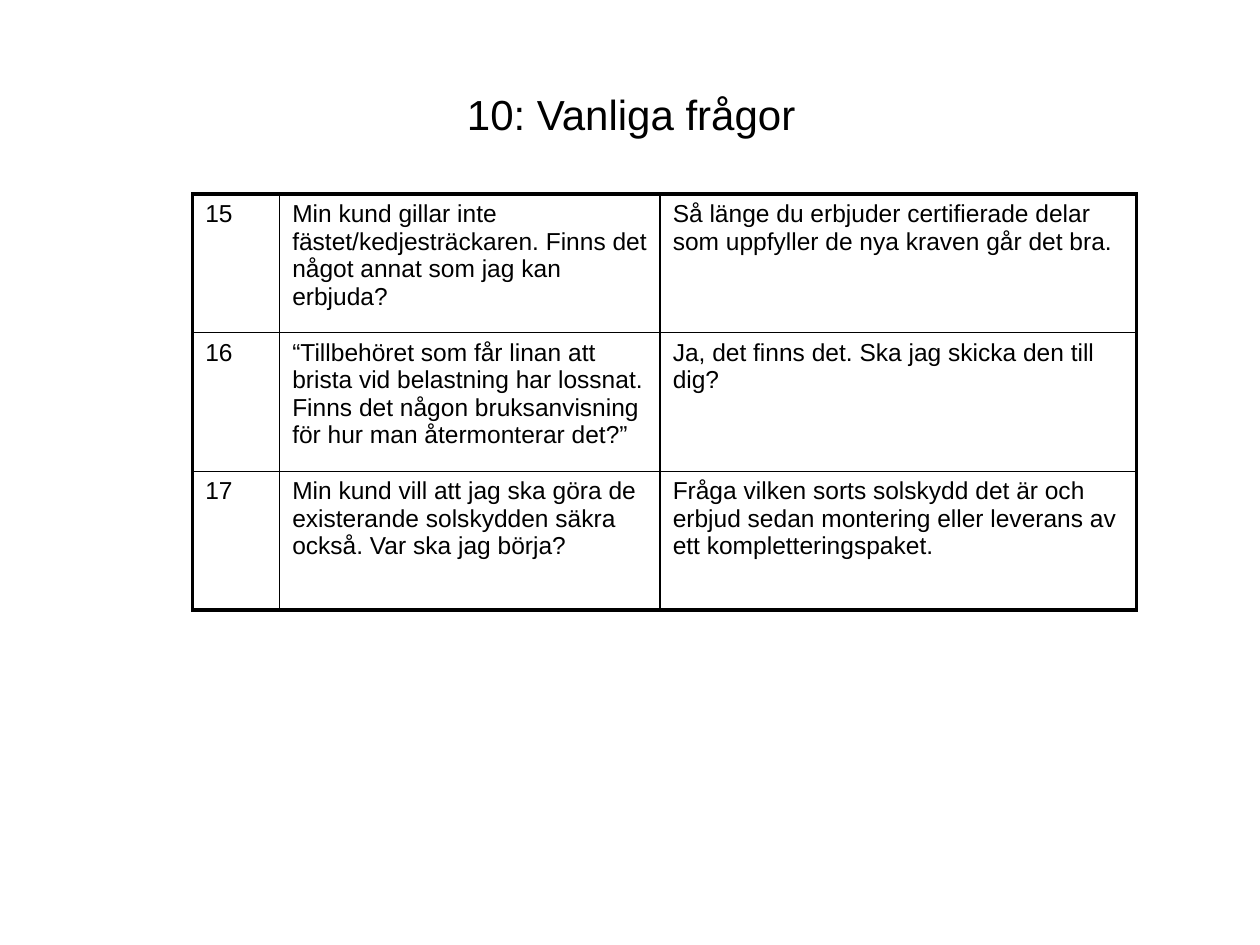
from dataclasses import dataclass

from lxml.etree import SubElement
from pptx import Presentation
from pptx.dml.color import RGBColor
from pptx.enum.text import MSO_ANCHOR, PP_ALIGN
from pptx.oxml.ns import qn
from pptx.util import Inches, Pt


@dataclass(frozen=True)
class Theme:
    font: str = "Arial"
    ink: str = "000000"
    title_size: float = 24
    cell_size: float = 14
    outer_line: float = 2.25
    inner_line: float = 1


theme = Theme()


def add_text(paragraph, text, size):
    run = paragraph.add_run()
    run.text = text
    run.font.name = theme.font
    run.font.size = Pt(size)
    run.font.bold = False
    run.font.color.rgb = RGBColor.from_string(theme.ink)


def add_border(cell, side, width):
    line = SubElement(cell._tc.get_or_add_tcPr(), qn(f"a:ln{side}"), w=str(Pt(width)))
    fill = SubElement(line, qn("a:solidFill"))
    SubElement(fill, qn("a:srgbClr"), val=theme.ink)


questions = [
    ("15",
     "Min kund gillar inte fästet/kedjesträckaren. Finns det något annat som jag kan erbjuda?",
     "Så länge du erbjuder certifierade delar som uppfyller de nya kraven går det bra."),
    ("16",
     "“Tillbehöret som får linan att brista vid belastning har lossnat. "
     "Finns det någon bruksanvisning för hur man återmonterar det?”",
     "Ja, det finns det. Ska jag skicka den till dig?"),
    ("17",
     "Min kund vill att jag ska göra de existerande solskydden säkra också. Var ska jag börja?",
     "Fråga vilken sorts solskydd det är och erbjud sedan montering eller leverans av "
     "ett kompletteringspaket."),
]
column_widths = [0.69, 3.02, 3.78]
row_height = 1.1

prs = Presentation()
prs.slide_width, prs.slide_height = Inches(10), Inches(7.5)
slide = prs.slides.add_slide(prs.slide_layouts[5])

# Title
title = slide.shapes.title
title.left, title.top = Inches(0.51), Inches(0.28)
title.width, title.height = Inches(9), Inches(1.25)
title.text_frame.vertical_anchor = MSO_ANCHOR.MIDDLE
heading = title.text_frame.paragraphs[0]
heading.alignment = PP_ALIGN.CENTER
add_text(heading, "10: Vanliga frågor", theme.title_size)

# Question and answer table
row_count, column_count = len(questions), len(column_widths)
faq = slide.shapes.add_table(
    row_count, column_count, Inches(1.53), Inches(1.54),
    Inches(sum(column_widths)), Inches(row_height * row_count)).table
faq.first_row = faq.horz_banding = False
for column, width in zip(faq.columns, column_widths):
    column.width = Inches(width)

# Cells, with a heavier line around the outside
for r, question in enumerate(questions):
    faq.rows[r].height = Inches(row_height)
    for c, text in enumerate(question):
        cell = faq.cell(r, c)
        add_text(cell.text_frame.paragraphs[0], text, theme.cell_size)
        outer_sides = {"L": c == 0, "R": c == column_count - 1,
                       "T": r == 0, "B": r == row_count - 1}
        for side, is_outer in outer_sides.items():
            add_border(cell, side, theme.outer_line if is_outer else theme.inner_line)
        cell.fill.background()

prs.save("out.pptx")
